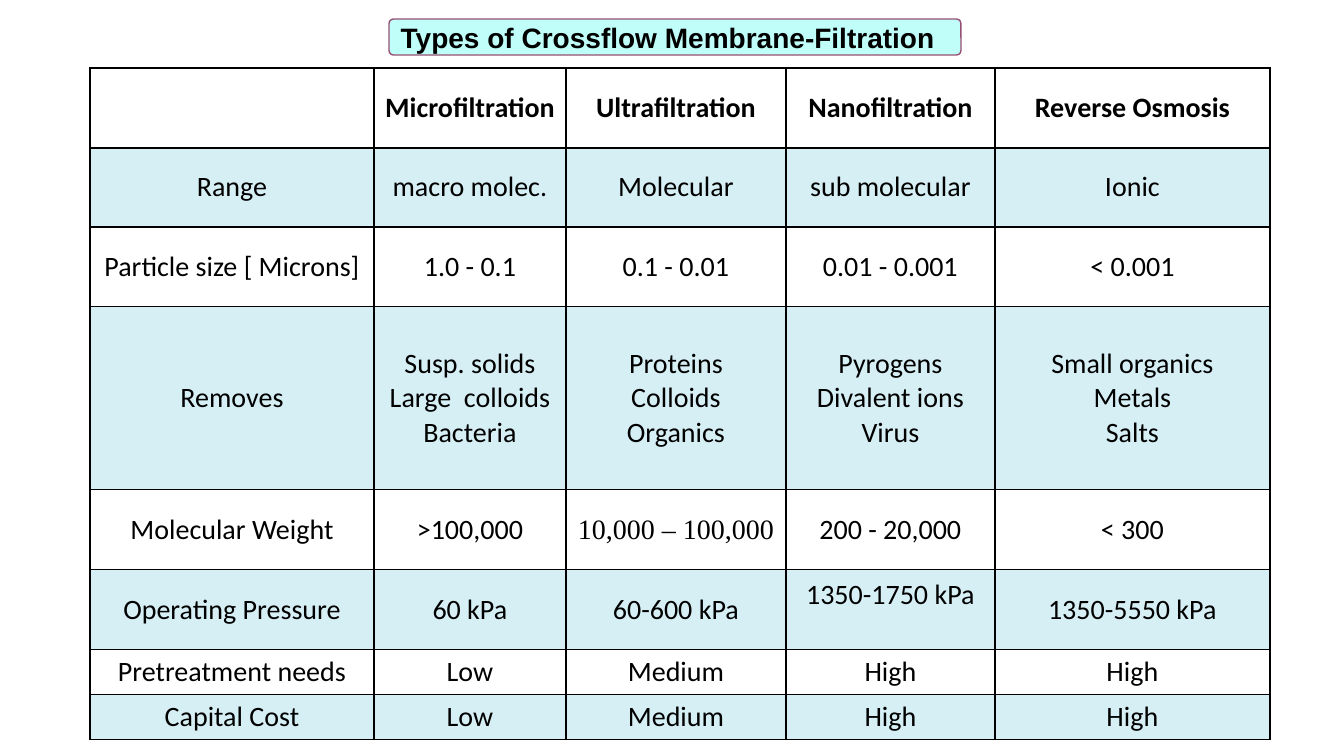
from lxml.etree import SubElement
from pptx import Presentation
from pptx.dml.color import RGBColor
from pptx.enum.shapes import MSO_SHAPE
from pptx.enum.text import MSO_ANCHOR, PP_ALIGN
from pptx.oxml.ns import qn
from pptx.util import Pt

COLS = [284, 192, 220, 209, 275]
ROWS = [80, 79, 80, 183, 80, 80, 45, 45]
DATA = [
    ["", "Microfiltration", "Ultrafiltration", "Nanofiltration", "Reverse Osmosis"],
    ["Range", "macro molec.", "Molecular", "sub molecular", "Ionic"],
    ["Particle size [ Microns]", "1.0 - 0.1", "0.1 - 0.01", "0.01 - 0.001", "< 0.001"],
    ["Removes", "Susp. solids\nLarge  colloids\nBacteria",
     "Proteins\nColloids\nOrganics", "Pyrogens\nDivalent ions\nVirus",
     "Small organics\nMetals\nSalts"],
    ["Molecular Weight", ">100,000", "10,000 – 100,000", "200 - 20,000", "< 300"],
    ["Operating Pressure", "60 kPa", "60-600 kPa", "1350-1750 kPa", "1350-5550 kPa"],
    ["Pretreatment needs", "Low", "Medium", "High", "High"],
    ["Capital Cost", "Low", "Medium", "High", "High"],
]
SERIF = (4, 2)
RAISED = (5, 3)


def px(n):
    return round(n * 914400 / 100.8)


def color(code):
    return RGBColor.from_string(code)


class Deck:
    """Holds the style and the current slide, and draws each kind of element."""

    ink, tint, size = "000000", "36AFCE", 20

    def __init__(self):
        self.file = Presentation()
        self.file.slide_width, self.file.slide_height = px(1344), px(756)
        self.slide = self.file.slides.add_slide(self.file.slide_layouts[6])

    def text(self, para, words, font, bold=False):
        run = para.add_run()
        run.text = words
        run.font.name, run.font.size, run.font.bold = font, Pt(self.size), bold
        run.font.color.rgb = color(self.ink)

    def panel(self, group, box, fill, line):
        shape = group.shapes.add_shape(MSO_SHAPE.ROUNDED_RECTANGLE, *map(px, box))
        shape.adjustments[0] = 0.125
        shape.shadow.inherit = False
        shape.fill.solid()
        shape.fill.fore_color.rgb = color(fill)
        shape.line.color.rgb = color(line)
        shape.line.width = Pt(1)

    def label(self, group, box, words):
        frame = group.shapes.add_textbox(*map(px, box)).text_frame
        frame.word_wrap = True
        self.text(frame.paragraphs[0], words, "Arial", True)

    def title(self, words):
        group = self.slide.shapes.add_group_shape()
        self.panel(group, (389, 19, 572, 36), "C0FEF9", "954F72")
        self.label(group, (383, 16, 573, 43), words)

    def border(self, cell):
        props = cell._tc.get_or_add_tcPr()
        for side in ("lnL", "lnR", "lnT", "lnB"):
            line = SubElement(props, qn("a:" + side), w=str(Pt(1)))
            fill = SubElement(line, qn("a:solidFill"))
            SubElement(fill, qn("a:srgbClr"), val=self.ink)

    def shade(self, cell, tinted):
        if not tinted:
            cell.fill.background()
            return
        cell.fill.solid()
        cell.fill.fore_color.rgb = color(self.tint)
        code = cell._tc.tcPr.find(qn("a:solidFill")).find(qn("a:srgbClr"))
        SubElement(code, qn("a:alpha"), val="20000")

    def cell(self, cell, words, font, bold):
        cell.vertical_anchor = MSO_ANCHOR.MIDDLE
        frame = cell.text_frame
        for i, line in enumerate(words.split("\n")):
            para = frame.add_paragraph() if i else frame.paragraphs[0]
            para.alignment = PP_ALIGN.CENTER
            if line:
                self.text(para, line, font, bold)

    def table(self, left, top, cols, rows, data):
        box = map(px, (left, top, sum(cols), sum(rows)))
        table = self.slide.shapes.add_table(len(rows), len(cols), *box).table
        table.first_row = table.horz_banding = False
        for col, width in zip(table.columns, cols):
            col.width = px(width)
        for r, (row, height) in enumerate(zip(table.rows, rows)):
            row.height = px(height)
            for c, cell in enumerate(row.cells):
                self.border(cell)
                self.shade(cell, r % 2)
                font = "Times New Roman" if (r, c) == SERIF else "Calibri"
                self.cell(cell, data[r][c], font, r == 0)
        return table


def main():
    deck = Deck()
    deck.title(" Types of Crossflow Membrane-Filtration")
    table = deck.table(90, 68, COLS, ROWS, DATA)
    table.cell(*RAISED).margin_bottom = px(35)
    deck.file.save("out.pptx")


if __name__ == "__main__":
    main()
